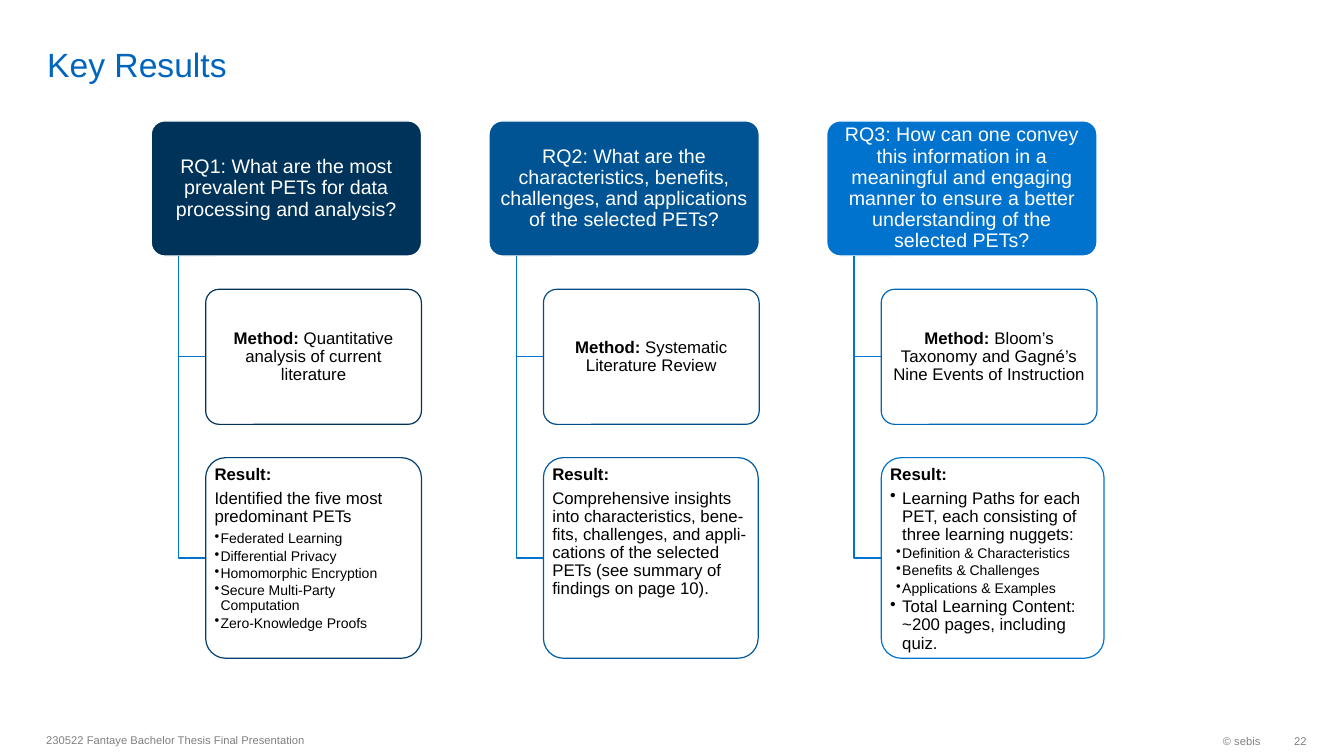
from lxml import etree
from pptx import Presentation
from pptx.dml.color import RGBColor
from pptx.enum.shapes import MSO_SHAPE
from pptx.enum.text import MSO_ANCHOR, PP_ALIGN
from pptx.oxml.ns import qn
from pptx.util import Inches, Pt

ROUND = MSO_SHAPE.ROUNDED_RECTANGLE
TOP, MIDDLE, BOTTOM = MSO_ANCHOR.TOP, MSO_ANCHOR.MIDDLE, MSO_ANCHOR.BOTTOM
LEFT, CENTER, RIGHT = PP_ALIGN.LEFT, PP_ALIGN.CENTER, PP_ALIGN.RIGHT

WHITE = RGBColor(255, 255, 255)
BLACK = RGBColor(0, 0, 0)
GRAY = RGBColor(0x80, 0x80, 0x80)
TITLE = RGBColor(0x00, 0x65, 0xBD)
BLUE = RGBColor(0x00, 0x73, 0xCF)
NAVY = RGBColor(0x00, 0x33, 0x59)
DEEP = RGBColor(0x00, 0x40, 0x71)
DARK = RGBColor(0x00, 0x4D, 0x88)
MID = RGBColor(0x00, 0x54, 0x94)
ROYAL = RGBColor(0x00, 0x5A, 0xA0)
AZURE = RGBColor(0x00, 0x67, 0xB7)

# Content: each result line is (style, text)
COLUMNS = [
    dict(question="RQ1: What are the most prevalent PETs for data processing and analysis?",
         method="Quantitative analysis of current literature",
         result=[("plain", "Identified the five most predominant PETs"),
                 ("item", "Federated Learning"),
                 ("item", "Differential Privacy"),
                 ("item", "Homomorphic Encryption"),
                 ("item", "Secure Multi-Party Computation"),
                 ("item", "Zero-Knowledge Proofs")],
         colors=(NAVY, NAVY, DEEP), width=2.14),
    dict(question="RQ2: What are the characteristics, benefits, challenges, "
                  "and applications of the selected PETs?",
         method="Systematic Literature Review",
         result=[("plain", "Comprehensive insights into characteristics, bene-fits, "
                           "challenges, and appli-cations of the selected PETs "
                           "(see summary of findings on page 10).")],
         colors=(MID, DARK, ROYAL), width=2.13),
    dict(question="RQ3: How can one convey this information in a meaningful and "
                  "engaging manner to ensure a better understanding of the selected PETs?",
         method="Bloom’s Taxonomy and Gagné’s Nine Events of Instruction",
         result=[("point", "Learning Paths for each PET, each consisting of "
                           "three learning nuggets:"),
                 ("sub", "Definition & Characteristics"),
                 ("sub", "Benefits & Challenges"),
                 ("sub", "Applications & Examples"),
                 ("point", "Total Learning Content: ~200 pages, including quiz.")],
         colors=(BLUE, AZURE, BLUE), width=2.21),
]

# Text, left, top, width, height, size, color, alignment, anchor, insets
LABELS = [
    ("Key Results", 0.37, 0.05, 11.58, 0.79, 24, TITLE, LEFT, BOTTOM, (0.1, 0, 0.1, 0)),
    ("© sebis", 10.26, 7.19, 2.34, 0.32, 8, GRAY, RIGHT, MIDDLE, (0.1, 0.05, 0.1, 0.05)),
    ("22", 12.6, 7.19, 0.36, 0.32, 8, GRAY, RIGHT, MIDDLE, (0.1, 0.05, 0, 0.05)),
    ("230522 Fantaye Bachelor Thesis Final Presentation",
     0.36, 7.18, 6.3, 0.32, 8, GRAY, LEFT, MIDDLE, (0.1, 0.05, 0.1, 0.05)),
]

# Style: size, space after, level, left margin, hanging indent
STYLES = {
    "plain": (12, 4.2, 0, 0, 0),
    "item": (10, 1.5, 1, 0.06, 0.06),
    "point": (12, 1.8, 1, 0.12, 0.12),
    "sub": (10, 1.5, 2, 0.12, 0.06),
}

# Grid
START, PITCH = 1.5, 3.35
HEAD_TOP, HEAD_W, BOX_H = 1.2, 2.68, 1.34
METHOD_TOP, METHOD_W = 2.87, 2.14
RESULT_TOP, RESULT_H = 4.54, 1.99
STEM, INDENT = 0.27, 0.54
LINE_W = 0.85

deck = Presentation()
deck.slide_width, deck.slide_height = Inches(13.33), Inches(7.5)
slide = deck.slides.add_slide(deck.slide_layouts[6])
shapes = slide.shapes


def set_frame(frame, anchor, insets):
    frame.word_wrap = True
    frame.vertical_anchor = anchor
    (frame.margin_left, frame.margin_top,
     frame.margin_right, frame.margin_bottom) = map(Inches, insets)


def add_run(para, text, size, color, bold=False):
    run = para.add_run()
    run.text = text
    font = run.font
    font.name, font.size, font.bold = "Arial", Pt(size), bold
    font.color.rgb = color


def add_box(left, top, width, height, line, fill=None, anchor=MIDDLE):
    box = shapes.add_shape(ROUND, *map(Inches, (left, top, width, height)))
    box.adjustments[0] = 0.1
    box.shadow.inherit = False
    box.fill.solid()
    box.fill.fore_color.rgb = fill or WHITE
    if fill is None:
        tint = box.fill._xPr.find(".//" + qn("a:srgbClr"))
        etree.SubElement(tint, qn("a:alpha"), val="90000")
    box.line.color.rgb = line
    box.line.width = Pt(LINE_W)
    set_frame(box.text_frame, anchor, (0.03, 0.02, 0.03, 0.02))
    para = box.text_frame.paragraphs[0]
    para.alignment = LEFT if anchor == TOP else CENTER
    para.line_spacing = 0.9
    return box.text_frame, para


def add_stem(left, end):
    """Draw the bent line from a question down to a box."""
    top = HEAD_TOP + BOX_H
    pen = shapes.build_freeform(Inches(left), Inches(top))
    pen.add_line_segments([(Inches(left), Inches(end)),
                           (Inches(left + STEM), Inches(end))], close=False)
    stem = pen.convert_to_shape()
    stem.shadow.inherit = False
    stem.fill.background()
    stem.line.color.rgb = BLUE
    stem.line.width = Pt(LINE_W)


def add_line(frame, style, text):
    size, after, level, margin, hang = STYLES[style]
    para = frame.add_paragraph()
    para.alignment = LEFT
    para.level = level
    para.line_spacing = 0.9
    para.space_after = Pt(after)
    if hang:
        props = para._p.get_or_add_pPr()
        props.set("marL", str(Inches(margin)))
        props.set("indent", str(-Inches(hang)))
        etree.SubElement(props, qn("a:buChar"), char="•")
    add_run(para, text, size, BLACK)


# Title and footer
for text, left, top, width, height, size, color, align, anchor, insets in LABELS:
    label = shapes.add_textbox(*map(Inches, (left, top, width, height)))
    set_frame(label.text_frame, anchor, insets)
    para = label.text_frame.paragraphs[0]
    para.alignment = align
    add_run(para, text, size, color)

# Research question columns
for i, col in enumerate(COLUMNS):
    left = START + i * PITCH
    inner = left + INDENT
    fill, edge, rim = col["colors"]

    frame, para = add_box(left, HEAD_TOP, HEAD_W, BOX_H, WHITE, fill)
    add_run(para, col["question"], 14, WHITE)

    add_stem(left + STEM, METHOD_TOP + BOX_H / 2)
    frame, para = add_box(inner, METHOD_TOP, METHOD_W, BOX_H, edge)
    add_run(para, "Method: ", 12, BLACK, True)
    add_run(para, col["method"], 12, BLACK)

    add_stem(left + STEM, RESULT_TOP + RESULT_H / 2)
    frame, para = add_box(inner, RESULT_TOP, col["width"], RESULT_H, rim, anchor=TOP)
    para.space_after = Pt(4.2)
    add_run(para, "Result:", 12, BLACK, True)
    for style, text in col["result"]:
        add_line(frame, style, text)

deck.save("out.pptx")
